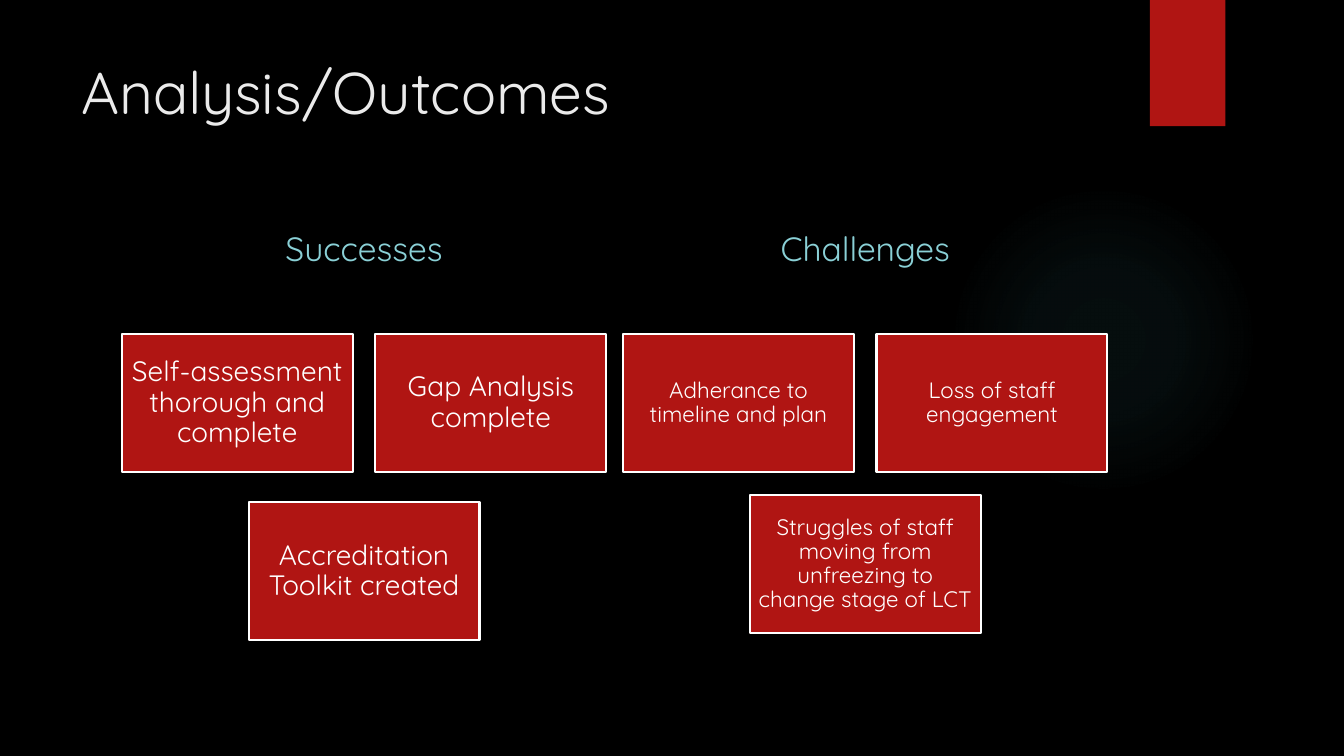
import pptx
import pptx.dml.color
import pptx.enum.shapes
import pptx.enum.text
import pptx.oxml
import pptx.oxml.ns
import pptx.util

Cm, Pt = pptx.util.Cm, pptx.util.Pt
SHAPE = pptx.enum.shapes.MSO_SHAPE
ALIGN = pptx.enum.text.PP_ALIGN
ANCHOR = pptx.enum.text.MSO_ANCHOR

CARD_W, CARD_H, CARD_GAP = 5.82, 3.49, 0.57
PANEL_W = 2 * CARD_W + CARD_GAP
HEADING_TOP, CARDS_TOP = 5.28, 8.41

# heading, left, row gap, text size, inset, cards
PANELS = [
    ("Successes", 3.07, 0.75, 20, 0.2,
     ["Self-assessment thorough and complete", "Gap Analysis complete",
      "Accreditation Toolkit created"]),
    ("Challenges", 15.7, 0.57, 16, 0.18,
     ["Adherance to timeline and plan", "Loss of staff engagement",
      "Struggles of staff moving from unfreezing to change stage of LCT"]),
]


def rgb(color):
    return pptx.dml.color.RGBColor.from_string(color)


def write(tf, text, size=20, color="FFFFFF", font="Quicksand", align=ALIGN.CENTER,
          anchor=ANCHOR.MIDDLE, inset=None, spacing=None):
    """Fill a text frame with one formatted paragraph."""
    tf.word_wrap = True
    tf.auto_size = pptx.enum.text.MSO_AUTO_SIZE.NONE
    tf.vertical_anchor = anchor
    if inset is not None:
        tf.margin_left = tf.margin_right = tf.margin_top = tf.margin_bottom = Cm(inset)
    p = tf.paragraphs[0]
    p.alignment = align
    p.line_spacing = spacing
    r = p.add_run()
    r.text = text
    r.font.name = font
    r.font.size = Pt(size)
    r.font.color.rgb = rgb(color)


class Deck:
    red, white, ice, teal, glow_teal = "B01513", "FFFFFF", "EBEBEB", "8AD0D6", "50B9C1"

    def __init__(self):
        self.prs = pptx.Presentation()
        self.prs.slide_width, self.prs.slide_height = Cm(33.87), Cm(19.05)
        self.s = self.prs.slides.add_slide(self.prs.slide_layouts[5])
        fill = self.s.background.fill
        fill.solid()
        fill.fore_color.rgb = rgb("000000")

    def title(self, text, x, y, w, h):
        sp = self.s.shapes.title
        sp.left, sp.top, sp.width, sp.height = Cm(x), Cm(y), Cm(w), Cm(h)
        write(sp.text_frame, text, size=42, color=self.ice, align=ALIGN.LEFT,
              anchor=ANCHOR.TOP)

    def heading(self, text, x, y, w, h):
        sp = self.s.shapes.add_textbox(Cm(x), Cm(y), Cm(w), Cm(h))
        write(sp.text_frame, text, size=24, color=self.teal, anchor=ANCHOR.BOTTOM)

    def box(self, x, y, w, h, outlined=False):
        sp = self.s.shapes.add_shape(SHAPE.RECTANGLE, Cm(x), Cm(y), Cm(w), Cm(h))
        sp.shadow.inherit = False
        sp.fill.solid()
        sp.fill.fore_color.rgb = rgb(self.red)
        if outlined:
            sp.line.color.rgb = rgb(self.white)
            sp.line.width = Pt(1.5)
        else:
            sp.line.fill.background()
        return sp

    def card(self, text, x, y, size, inset):
        sp = self.box(x, y, CARD_W, CARD_H, outlined=True)
        write(sp.text_frame, text, size=size, inset=inset, spacing=0.9)

    def glow(self, x, y, d):
        """Add a circle that fades out from its centre."""
        sp = self.s.shapes.add_shape(SHAPE.OVAL, Cm(x), Cm(y), Cm(d), Cm(d))
        sp.shadow.inherit = False
        sp.line.fill.background()
        sp.fill.background()
        stops = "".join(
            f'<a:gs pos="{pos * 1000}"><a:srgbClr val="{self.glow_teal}">'
            f'<a:alpha val="{alpha * 1000}"/></a:srgbClr></a:gs>'
            for pos, alpha in [(0, 7), (36, 6), (69, 0)])
        grad = pptx.oxml.parse_xml(
            f'<a:gradFill {pptx.oxml.ns.nsdecls("a")}><a:gsLst>{stops}</a:gsLst>'
            '<a:path path="circle"><a:fillToRect l="50000" t="50000" r="50000" b="50000"/>'
            '</a:path></a:gradFill>')
        spPr = sp._element.spPr
        spPr.replace(spPr.find(pptx.oxml.ns.qn("a:noFill")), grad)

    def panel(self, heading, x, row_gap, size, inset, cards):
        """Add a heading over two cards, with a third centred below."""
        self.heading(heading, x, HEADING_TOP, PANEL_W, 1.6)
        step = CARD_W + CARD_GAP
        low = CARDS_TOP + CARD_H + row_gap
        places = [(x, CARDS_TOP), (x + step, CARDS_TOP), (x + step / 2, low)]
        for text, (left, top) in zip(cards, places):
            self.card(text, left, top, size, inset)


def main():
    deck = Deck()
    deck.glow(23.9, 4.65, 7.82)
    deck.box(28.98, 0, 1.9, 3.18)
    deck.title("Analysis/Outcomes", 1.8, 1.27, 26.14, 3.89)
    for panel in PANELS:
        deck.panel(*panel)
    deck.prs.save("out.pptx")


if __name__ == "__main__":
    main()
